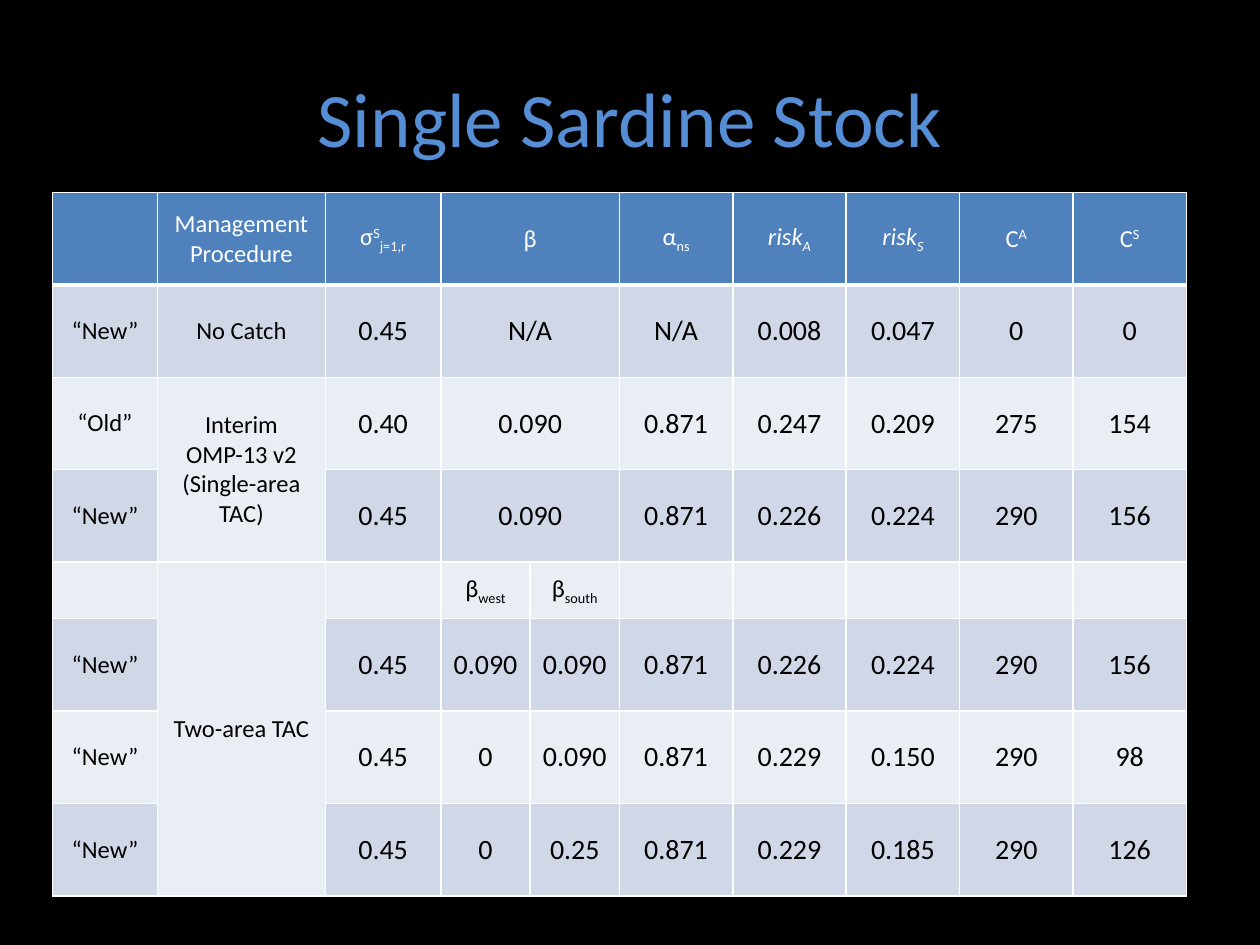
"""Build the single sardine stock slide with its table of management procedures."""

import dataclasses
import typing

import lxml.etree
import pptx
import pptx.dml.color
import pptx.enum.text
import pptx.oxml.ns
import pptx.util

Pt = pptx.util.Pt
RGB = pptx.dml.color.RGBColor.from_string
MIDDLE = pptx.enum.text.MSO_ANCHOR.MIDDLE
CENTER = pptx.enum.text.PP_ALIGN.CENTER


@dataclasses.dataclass(frozen=True)
class Theme:
    font: str = "Calibri"
    background: str = "000000"
    title: str = "558ED5"
    header: str = "4F81BD"
    header_text: str = "FFFFFF"
    body_text: str = "000000"
    border: str = "FFFFFF"
    bands: tuple[str, str] = ("D0D8E8", "E9EDF4")
    title_size: float = 44
    label_size: float = 14
    value_size: float = 16
    rule: float = 1
    header_rule: float = 3


class Part(typing.NamedTuple):
    text: str
    baseline: int = 0
    italic: bool = False


class Span(typing.NamedTuple):
    first: tuple[int, int]
    last: tuple[int, int]


def sub(text: str, italic: bool = False) -> Part:
    return Part(text, -25000, italic)


def sup(text: str) -> Part:
    return Part(text, 30000)


Content = str | tuple[Part, ...]

THEME = Theme()
COLUMN_WIDTHS = [60, 96, 66] + [51] * 2 + [64.8] * 5
ROW_HEIGHTS = [52.8] * 4 + [32.4] + [52.8] * 3
BETA_ROW = 4
LABEL_COLUMNS = 2

HEADINGS: list[Content] = [
    "", "Management Procedure", (Part("σ"), sup("S"), sub("j=1,r")), "β", "",
    (Part("α"), sub("ns")),
    (Part("risk", italic=True), sub("A", italic=True)),
    (Part("risk", italic=True), sub("S", italic=True)),
    (Part("C"), sup("A")), (Part("C"), sup("S")),
]
BETAS: list[Content] = [
    "", "Two-area TAC", "", (Part("β"), sub("west")), (Part("β"), sub("south")),
    "", "", "", "", "",
]
ROWS: list[list[Content]] = [
    HEADINGS,
    ["“New”", "No Catch", "0.45", "N/A", "", "N/A", "0.008", "0.047", "0", "0"],
    ["“Old”", "Interim OMP-13 v2 (Single-area TAC)", "0.40", "0.090", "", "0.871", "0.247", "0.209", "275", "154"],
    ["“New”", "", "0.45", "0.090", "", "0.871", "0.226", "0.224", "290", "156"],
    BETAS,
    ["“New”", "", "0.45", "0.090", "0.090", "0.871", "0.226", "0.224", "290", "156"],
    ["“New”", "", "0.45", "0", "0.090", "0.871", "0.229", "0.150", "290", "98"],
    ["“New”", "", "0.45", "0", "0.25", "0.871", "0.229", "0.185", "290", "126"],
]
SPANS = [Span((row, 3), (row, 4)) for row in range(BETA_ROW)]
SPANS += [Span((2, 1), (3, 1)), Span((4, 1), (7, 1))]


def apply(target: object, values: dict[str, object]) -> None:
    for name, value in values.items():
        setattr(target, name, value)


def write(frame: typing.Any, content: Content, size: float, color: str) -> None:
    paragraph = frame.paragraphs[0]
    paragraph.alignment = CENTER
    parts = (Part(content),) if isinstance(content, str) else content
    for part in parts:
        if not part.text:
            continue
        run = paragraph.add_run()
        run.text = part.text
        apply(run.font, {"name": THEME.font, "size": Pt(size), "bold": False, "italic": part.italic})
        run.font.color.rgb = RGB(color)
        if part.baseline:
            run._r.get_or_add_rPr().set("baseline", str(part.baseline))


def draw_borders(cell: typing.Any, row: int) -> None:
    top = THEME.header_rule if row == 1 else THEME.rule
    bottom = THEME.header_rule if row == 0 else THEME.rule
    widths = {"L": THEME.rule, "R": THEME.rule, "T": top, "B": bottom}
    qn = pptx.oxml.ns.qn
    properties = cell._tc.get_or_add_tcPr()
    for side, width in widths.items():
        line = lxml.etree.SubElement(properties, qn(f"a:ln{side}"), w=str(Pt(width)))
        fill = lxml.etree.SubElement(line, qn("a:solidFill"))
        lxml.etree.SubElement(fill, qn("a:srgbClr"), val=THEME.border)


def draw_cell(cell: typing.Any, row: int, column: int, content: Content) -> None:
    is_label = row in (0, BETA_ROW) or column < LABEL_COLUMNS
    draw_borders(cell, row)
    cell.fill.solid()
    cell.fill.fore_color.rgb = RGB(THEME.bands[(row - 1) % 2] if row else THEME.header)
    apply(cell, {
        "vertical_anchor": MIDDLE,
        "margin_left": Pt(5), "margin_right": Pt(5),
        "margin_top": Pt(0), "margin_bottom": Pt(0),
    })
    write(cell.text_frame, content,
          THEME.label_size if is_label else THEME.value_size,
          THEME.body_text if row else THEME.header_text)


def draw_title(slide: typing.Any, text: str) -> None:
    frame = slide.shapes.add_textbox(Pt(0), Pt(21.6), Pt(720), Pt(90)).text_frame
    apply(frame, {"word_wrap": True, "vertical_anchor": MIDDLE})
    write(frame, text, THEME.title_size, THEME.title)


def draw_table(slide: typing.Any) -> None:
    table = slide.shapes.add_table(
        len(ROWS), len(COLUMN_WIDTHS), Pt(30), Pt(110),
        Pt(sum(COLUMN_WIDTHS)), Pt(sum(ROW_HEIGHTS)),
    ).table
    for column, width in zip(table.columns, COLUMN_WIDTHS):
        column.width = Pt(width)
    for row, height in zip(table.rows, ROW_HEIGHTS):
        row.height = Pt(height)
    for span in SPANS:
        table.cell(*span.first).merge(table.cell(*span.last))
    for row, contents in enumerate(ROWS):
        for column, content in enumerate(contents):
            draw_cell(table.cell(row, column), row, column, content)


def main() -> None:
    deck = pptx.Presentation()
    apply(deck, {"slide_width": Pt(720), "slide_height": Pt(540)})
    slide = deck.slides.add_slide(deck.slide_layouts[6])
    slide.background.fill.solid()
    slide.background.fill.fore_color.rgb = RGB(THEME.background)
    draw_title(slide, "Single Sardine Stock")
    draw_table(slide)
    deck.save("out.pptx")


if __name__ == "__main__":
    main()
